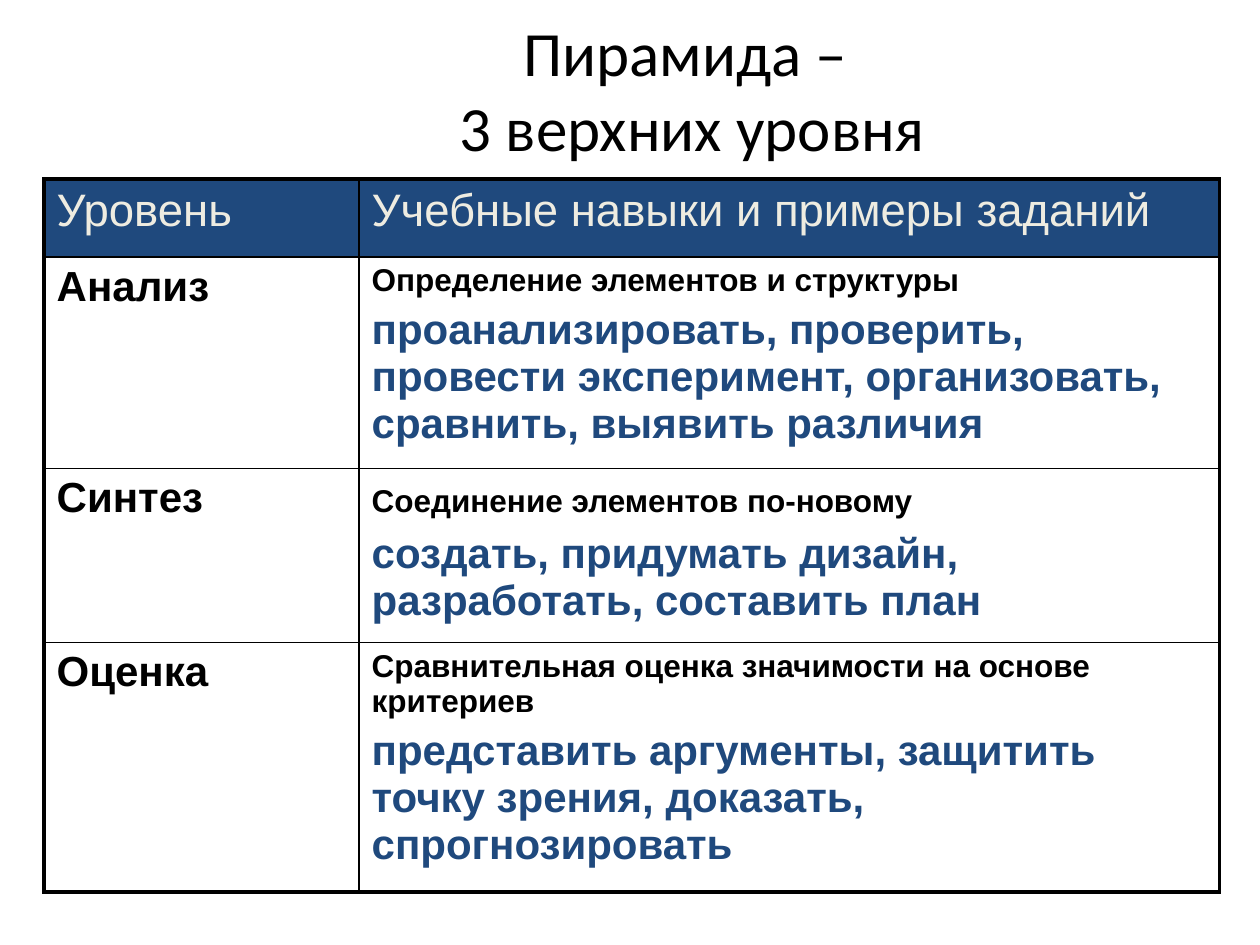
import pptx
import pptx.dml.color
import pptx.enum.text
import pptx.oxml
import pptx.oxml.ns
import pptx.util
from pptx.util import Inches

COLORS = {"black": "000000", "navy": "1F497D", "cream": "EEECE1"}
COLUMN_WIDTHS = [2.5, 6.83]
ROW_HEIGHTS = [0.62, 1.68, 1.38, 1.98]
HEADERS = ["Уровень", "Учебные навыки и примеры заданий"]
LEVELS = [
    ("Анализ", "Определение элементов и структуры",
     "проанализировать, проверить, провести эксперимент, организовать, "
     "сравнить, выявить различия"),
    ("Синтез", "Соединение элементов по-новому",
     "создать, придумать дизайн, разработать, составить план"),
    ("Оценка", "Сравнительная оценка значимости на основе критериев",
     "представить аргументы, защитить точку зрения, доказать, спрогнозировать"),
]


def rgb(name):
    return pptx.dml.color.RGBColor.from_string(COLORS[name])


def write(para, text, size=24, color="black", font="Arial", bold=True):
    """Add text to a paragraph; a newline becomes a line break."""
    for index, line in enumerate(text.split("\n")):
        if index:
            para.add_line_break()
        span = para.add_run()
        span.text = line
        span.font.name = font
        span.font.size = pptx.util.Pt(size)
        span.font.bold = bold
        span.font.color.rgb = rgb(color)


def add_title(page, text):
    box = page.shapes.add_textbox(
        Inches(1.25), Inches(0.08), Inches(8.49), Inches(1.25))
    frame = box.text_frame
    frame.word_wrap = True
    frame.vertical_anchor = pptx.enum.text.MSO_ANCHOR.MIDDLE
    para = frame.paragraphs[0]
    para.alignment = pptx.enum.text.PP_ALIGN.CENTER
    write(para, text, size=36, font="Calibri", bold=False)


def set_borders(cell, widths):
    """Draw black cell borders; widths maps L, R, T, B to points."""
    properties = cell._tc.get_or_add_tcPr()
    for index, (side, width) in enumerate(widths.items()):
        line = pptx.oxml.parse_xml(
            f'<a:ln{side} {pptx.oxml.ns.nsdecls("a")} w="{pptx.util.Pt(width)}">'
            f'<a:solidFill><a:srgbClr val="{COLORS["black"]}"/></a:solidFill>'
            f'</a:ln{side}>')
        properties.insert(index, line)


def add_grid(page):
    """Add the empty table with a thick frame and thin inner lines."""
    rows, columns = len(ROW_HEIGHTS), len(COLUMN_WIDTHS)
    table = page.shapes.add_table(
        rows, columns, Inches(0.35), Inches(1.42),
        Inches(sum(COLUMN_WIDTHS)), Inches(sum(ROW_HEIGHTS))).table
    table.horz_banding = False
    for column, width in zip(table.columns, COLUMN_WIDTHS):
        column.width = Inches(width)
    for r, height in enumerate(ROW_HEIGHTS):
        table.rows[r].height = Inches(height)
        for c in range(columns):
            cell = table.cell(r, c)
            if r == 0:
                cell.fill.solid()
                cell.fill.fore_color.rgb = rgb("navy")
            else:
                cell.fill.background()
            outer = {"L": c == 0, "R": c == columns - 1,
                     "T": r == 0, "B": r == rows - 1}
            set_borders(cell, {side: 2.25 if edge else 1
                               for side, edge in outer.items()})
    return table


def fill_level(table, row, level, skill, tasks):
    write(table.cell(row, 0).text_frame.paragraphs[0], level)
    frame = table.cell(row, 1).text_frame
    write(frame.paragraphs[0], skill, size=18)
    if level == "Синтез":
        write(frame.paragraphs[0], " ")
    para = frame.add_paragraph()
    para.space_before = pptx.util.Pt(4.8)
    write(para, tasks, color="navy")


def main():
    deck = pptx.Presentation()
    deck.slide_width, deck.slide_height = Inches(10), Inches(7.5)
    page = deck.slides.add_slide(deck.slide_layouts[6])
    add_title(page, "Пирамида – \n3 верхних уровня")
    table = add_grid(page)
    for column, header in enumerate(HEADERS):
        write(table.cell(0, column).text_frame.paragraphs[0], header,
              size=26, color="cream", bold=False)
    for row, level in enumerate(LEVELS, start=1):
        fill_level(table, row, *level)
    deck.save("out.pptx")


if __name__ == "__main__":
    main()
